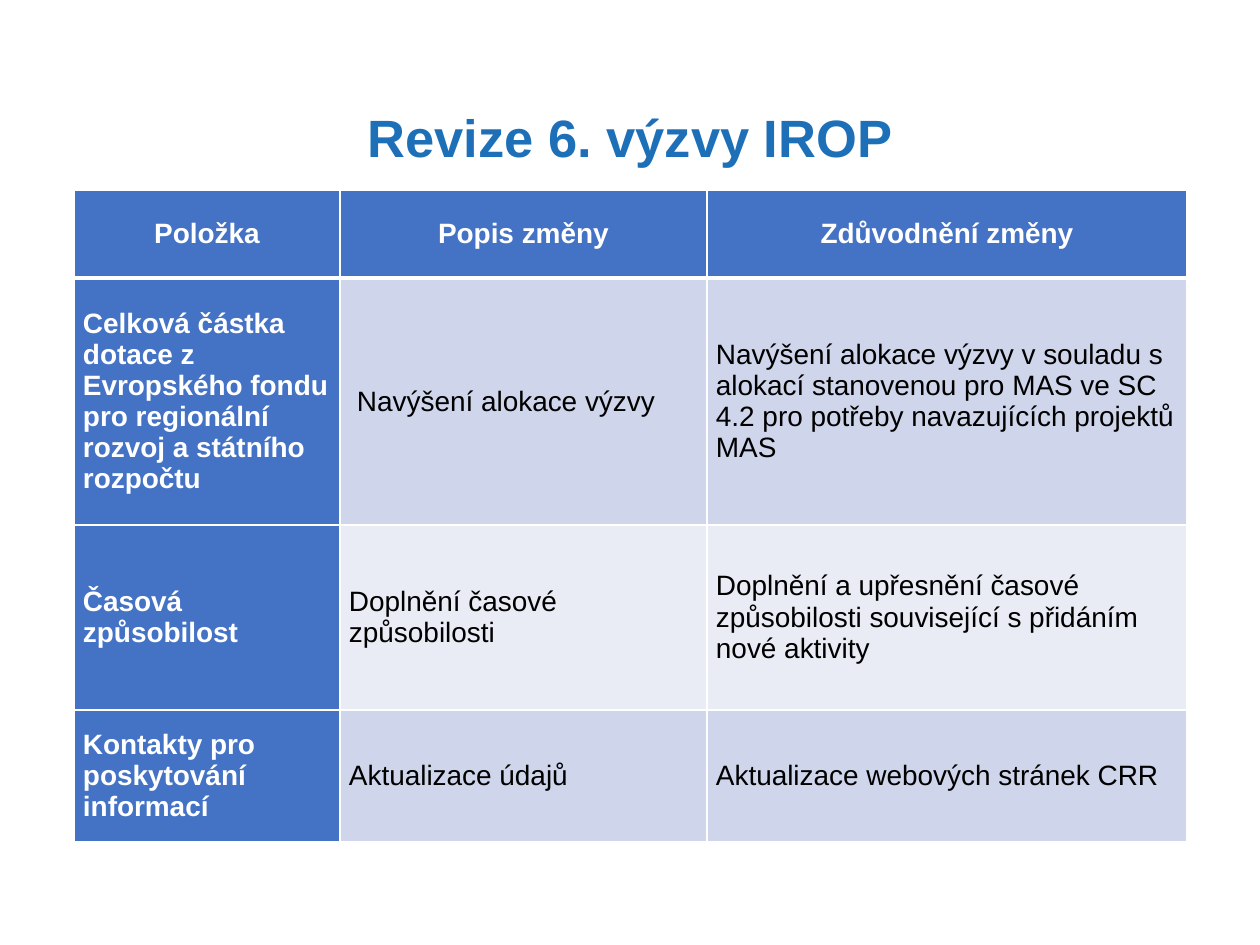
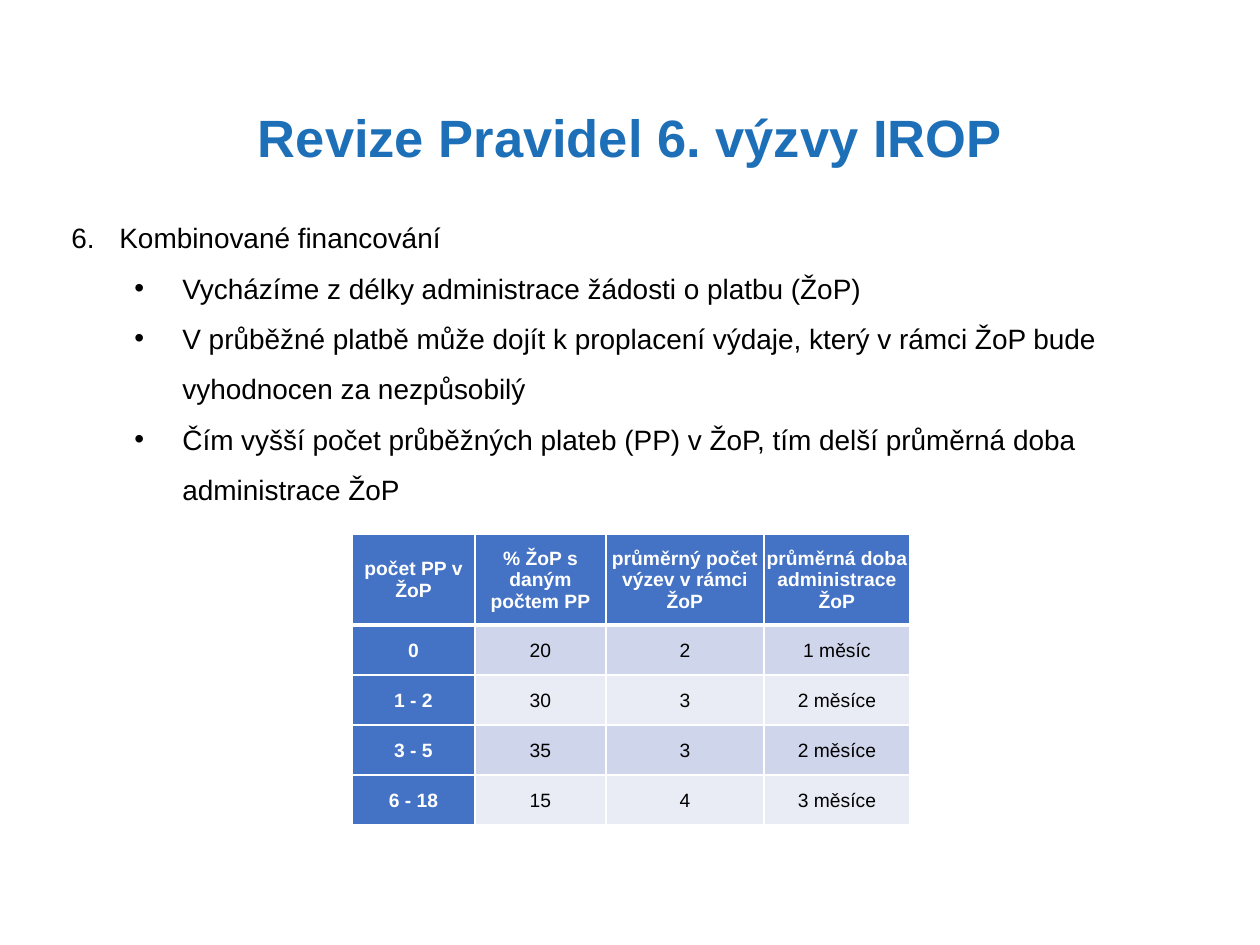
from dataclasses import dataclass, field

import lxml.etree
import pptx
import pptx.dml.color
import pptx.enum.text
import pptx.oxml.ns
import pptx.presentation
import pptx.slide
import pptx.table
import pptx.text.text
import pptx.util

PX_PER_INCH = 126
TITLE_ONLY = 5
ALIGN = pptx.enum.text.PP_ALIGN
ANCHOR = pptx.enum.text.MSO_ANCHOR


@dataclass(frozen=True)
class Theme:
    font: str = "Arial"
    title_color: str = "1D70B8"
    accent: str = "4472C4"
    bands: tuple[str, str] = ("CFD5EA", "E9EBF5")
    light: str = "FFFFFF"
    dark: str = "000000"
    title_size: int = 30
    body_size: int = 16
    small_size: int = 11
    thin_rule: int = 1
    header_rule: int = 3
    body_spacing: float = 1.5


THEME = Theme()


@dataclass(frozen=True)
class Box:
    left: int
    top: int
    width: int
    height: int

    def emu(self) -> tuple[int, int, int, int]:
        return px(self.left), px(self.top), px(self.width), px(self.height)


@dataclass(frozen=True)
class ListItem:
    text: str
    level: int = 0
    number: int | None = None


@dataclass(frozen=True)
class TableSpec:
    left: int
    top: int
    columns: list[int]
    rows: list[int]
    content: list[list[str]]
    size: int
    insets: tuple[int, int, int, int]
    centred_body: bool = False
    indents: dict[tuple[int, int], int] = field(default_factory=dict)


TITLE_BOX = Box(99, 99, 1062, 77)
LIST_BOX = Box(59, 198, 1166, 420)
HANGING = 48
LEVEL_STEP = 63

CALL_CHANGES = TableSpec(
    left=74, top=190,
    columns=[266, 367, 480],
    rows=[88, 247, 185, 132],
    content=[
        ["Položka", "Popis změny", "Zdůvodnění změny"],
        ["Celková částka dotace z Evropského fondu pro regionální rozvoj a státního rozpočtu",
         "Navýšení alokace výzvy",
         "Navýšení alokace výzvy v souladu s alokací stanovenou pro MAS ve SC 4.2 "
         "pro potřeby navazujících projektů MAS"],
        ["Časová způsobilost",
         "Doplnění časové způsobilosti",
         "Doplnění a upřesnění časové způsobilosti související s přidáním nové aktivity"],
        ["Kontakty pro poskytování informací",
         "Aktualizace údajů",
         "Aktualizace webových stránek CRR"],
    ],
    size=THEME.body_size,
    insets=(9, 0, 9, 0),
    indents={(1, 1): 8},
)

PAYMENT_TIMES = TableSpec(
    left=352, top=534,
    columns=[123, 131, 158, 146],
    rows=[91] + [50] * 4,
    content=[
        ["počet PP v ŽoP", "% ŽoP s daným počtem PP",
         "průměrný počet výzev v rámci ŽoP", "průměrná doba administrace ŽoP"],
        ["0", "20", "2", "1 měsíc"],
        ["1 - 2", "30", "3", "2 měsíce"],
        ["3 - 5", "35", "3", "2 měsíce"],
        ["6 - 18", "15", "4", "3 měsíce"],
    ],
    size=THEME.small_size,
    insets=(1, 1, 1, 0),
    centred_body=True,
)

FINANCING = [
    ListItem("Kombinované financování", number=6),
    ListItem("Vycházíme z délky administrace žádosti o platbu (ŽoP)", level=1),
    ListItem("V průběžné platbě může dojít k proplacení výdaje, který v rámci ŽoP "
             "bude vyhodnocen za nezpůsobilý", level=1),
    ListItem("Čím vyšší počet průběžných plateb (PP) v ŽoP, tím delší průměrná doba "
             "administrace ŽoP", level=1),
]


def px(length: int) -> int:
    return round(length * 914400 / PX_PER_INCH)


def rgb(color: str) -> pptx.dml.color.RGBColor:
    return pptx.dml.color.RGBColor.from_string(color)


def sub(parent: lxml.etree._Element, tag: str, **attributes: object) -> lxml.etree._Element:
    """Append a DrawingML element with the given attributes."""
    element = lxml.etree.SubElement(parent, pptx.oxml.ns.qn(f"a:{tag}"))
    for key, value in attributes.items():
        element.set(key, str(value))
    return element


def add_run(paragraph: pptx.text.text._Paragraph, text: str, size: int,
            color: str, bold: bool = False) -> None:
    run = paragraph.add_run()
    run.text = text
    run.font.name = THEME.font
    run.font.size = pptx.util.Pt(size)
    run.font.bold = bold
    run.font.color.rgb = rgb(color)


# Shared slide frame
def add_titled_slide(deck: pptx.presentation.Presentation, heading: str) -> pptx.slide.Slide:
    slide = deck.slides.add_slide(deck.slide_layouts[TITLE_ONLY])
    title = slide.shapes.title
    title.left, title.top, title.width, title.height = TITLE_BOX.emu()
    frame = title.text_frame
    frame.word_wrap = True
    frame.auto_size = pptx.enum.text.MSO_AUTO_SIZE.NONE
    frame.vertical_anchor = ANCHOR.TOP
    paragraph = frame.paragraphs[0]
    paragraph.alignment = ALIGN.CENTER
    add_run(paragraph, heading, THEME.title_size, THEME.title_color, bold=True)
    return slide


# Numbered and bulleted text
def add_list(slide: pptx.slide.Slide, box: Box, items: list[ListItem]) -> None:
    frame = slide.shapes.add_textbox(*box.emu()).text_frame
    frame.word_wrap = True
    for index, item in enumerate(items):
        paragraph = frame.add_paragraph() if index else frame.paragraphs[0]
        paragraph.level = item.level
        properties = paragraph._p.get_or_add_pPr()
        properties.set("marL", str(px(HANGING + item.level * LEVEL_STEP)))
        properties.set("indent", str(-px(HANGING)))
        sub(properties, "buFont", typeface=THEME.font)
        if item.number is None:
            sub(properties, "buChar", char="•")
        else:
            sub(properties, "buAutoNum", type="arabicPeriod", startAt=item.number)
        paragraph.line_spacing = THEME.body_spacing
        add_run(paragraph, item.text, THEME.body_size, THEME.dark)


# Tables with a header row and a header column
def add_borders(cell: pptx.table._Cell, top: int, bottom: int) -> None:
    properties = cell._tc.get_or_add_tcPr()
    widths = {"lnL": THEME.thin_rule, "lnR": THEME.thin_rule, "lnT": top, "lnB": bottom}
    for side, width in widths.items():
        line = sub(properties, side, w=pptx.util.Pt(width))
        sub(sub(line, "solidFill"), "srgbClr", val=THEME.light)


def format_cell(cell: pptx.table._Cell, spec: TableSpec, row: int, column: int) -> None:
    is_header = row == 0 or column == 0
    add_borders(cell,
                top=THEME.header_rule if row == 1 else THEME.thin_rule,
                bottom=THEME.header_rule if row == 0 else THEME.thin_rule)
    cell.fill.solid()
    cell.fill.fore_color.rgb = rgb(THEME.accent if is_header else THEME.bands[(row - 1) % 2])
    left, top, right, bottom = spec.insets
    cell.margin_left = px(left + spec.indents.get((row, column), 0))
    cell.margin_top, cell.margin_right, cell.margin_bottom = px(top), px(right), px(bottom)
    cell.vertical_anchor = ANCHOR.MIDDLE
    paragraph = cell.text_frame.paragraphs[0]
    paragraph.alignment = ALIGN.CENTER if row == 0 or spec.centred_body else ALIGN.LEFT
    add_run(paragraph, spec.content[row][column], spec.size,
            THEME.light if is_header else THEME.dark, bold=is_header)


def add_table(slide: pptx.slide.Slide, spec: TableSpec) -> None:
    box = Box(spec.left, spec.top, sum(spec.columns), sum(spec.rows))
    table = slide.shapes.add_table(len(spec.rows), len(spec.columns), *box.emu()).table
    table.first_col = True
    for column, width in zip(table.columns, spec.columns):
        column.width = px(width)
    for row, height in zip(table.rows, spec.rows):
        row.height = px(height)
    for row in range(len(spec.rows)):
        for column in range(len(spec.columns)):
            format_cell(table.cell(row, column), spec, row, column)


def main() -> None:
    deck = pptx.Presentation()
    deck.slide_width = pptx.util.Inches(10)
    deck.slide_height = pptx.util.Inches(7.5)

    # Changes to the call
    call_slide = add_titled_slide(deck, "Revize 6. výzvy IROP")
    add_table(call_slide, CALL_CHANGES)

    # Changes to the rules: combined financing
    rules_slide = add_titled_slide(deck, "Revize Pravidel 6. výzvy IROP")
    add_list(rules_slide, LIST_BOX, FINANCING)
    add_table(rules_slide, PAYMENT_TIMES)

    deck.save("out.pptx")


if __name__ == "__main__":
    main()
